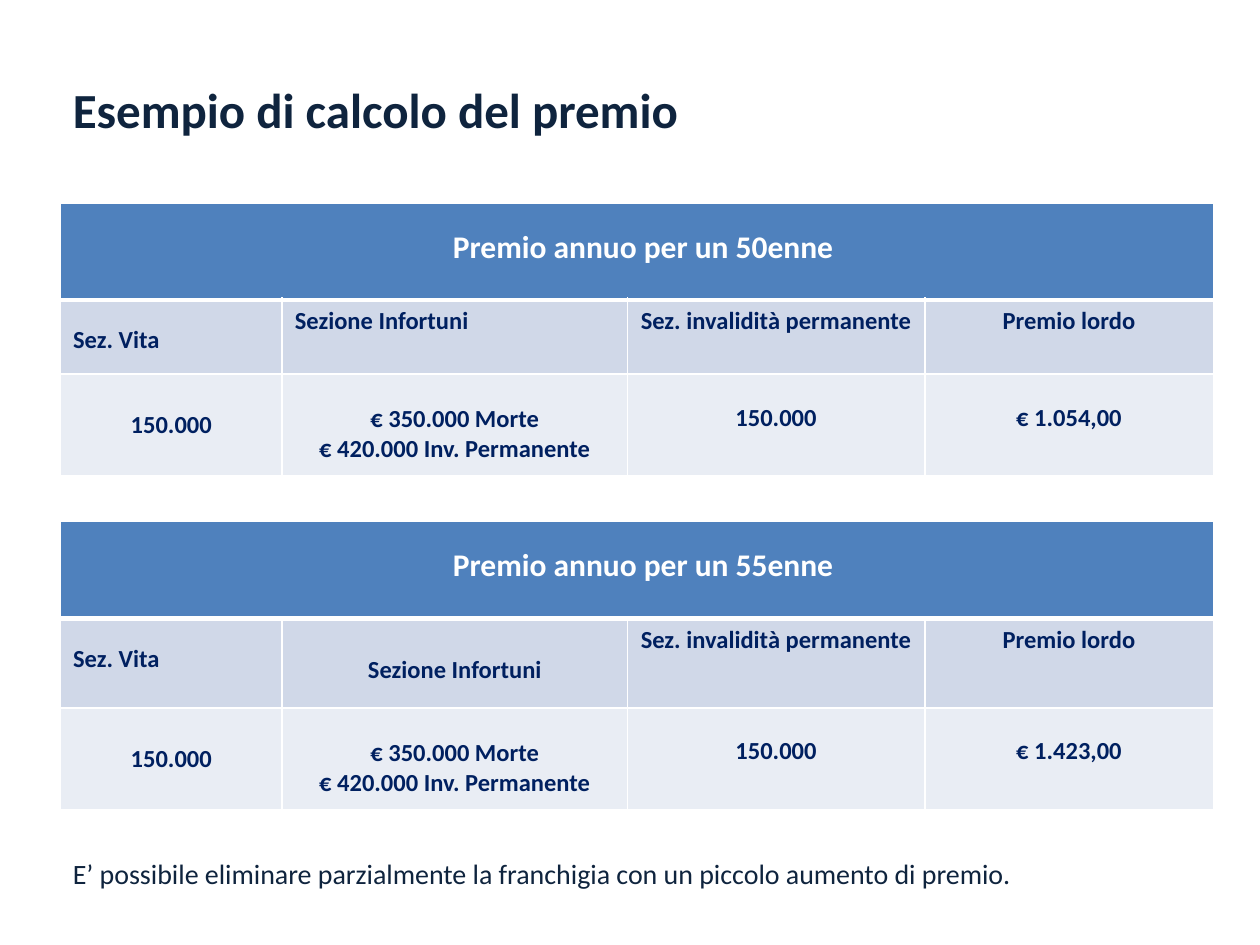
from lxml import etree
from pptx import Presentation, util as u
from pptx.dml.color import RGBColor
from pptx.enum.text import MSO_ANCHOR, PP_ALIGN
from pptx.oxml.ns import qn

TITLE = "Esempio di calcolo del premio"
NOTE = "E’ possibile eliminare parzialmente la franchigia con un piccolo aumento di premio."
HEADS = ["Sez. Vita", "Sezione Infortuni", "Sez. invalidità permanente", "Premio lordo"]
COVER = ["150.000", "€ 350.000 Morte\n€ 420.000 Inv. Permanente", "150.000"]
LEFT, WIDTH = 0.48, 9.15
COLS = [1.76, 2.74, 2.36, 2.29]
FILLS = ["4F81BD", "D0D8E8", "E9EDF4"]
NAVY, DARK, WHITE = "002060", "0F243E", "FFFFFF"
L, C, J = PP_ALIGN.LEFT, PP_ALIGN.CENTER, PP_ALIGN.JUSTIFY
TOP, MID = MSO_ANCHOR.TOP, MSO_ANCHOR.MIDDLE

# age, price, table top, header row height, alignment and top inset of "Sezione Infortuni"
PLANS = [
    ("50enne", "€ 1.054,00", 1.61, 0.59, L, 0.05),
    ("55enne", "€ 1.423,00", 4.14, 0.71, C, 0.29),
]


def color(code):
    return RGBColor.from_string(code)


def write(frame, words, size, code, bold, align):
    frame.text = words
    for par in frame.paragraphs:
        par.alignment = align
        for run in par.runs:
            font = run.font
            font.name, font.size, font.bold = "Calibri", u.Pt(size), bold
            font.color.rgb = color(code)


def label(slide, words, top, width, height, size, bold):
    box = slide.shapes.add_textbox(*map(u.Inches, (LEFT, top, width, height)))
    box.text_frame.word_wrap = True
    write(box.text_frame, words, size, DARK, bold, J)


def edge(cell, row):
    """White cell borders, thicker under the banner row."""
    props = cell._tc.get_or_add_tcPr()
    for side in "LRTB":
        thick = (row, side) in ((0, "B"), (1, "T"))
        line = etree.SubElement(props, qn("a:ln" + side), w=str(u.Pt(3 if thick else 1)))
        fill = etree.SubElement(line, qn("a:solidFill"))
        etree.SubElement(fill, qn("a:srgbClr"), val=WHITE)


def style(cell, words, row, align, anchor, top, bottom, right=0.1):
    edge(cell, row)
    cell.fill.solid()
    cell.fill.fore_color.rgb = color(FILLS[row])
    cell.vertical_anchor = anchor
    cell.margin_left, cell.margin_right = u.Inches(0.1), u.Inches(right)
    cell.margin_top, cell.margin_bottom = u.Inches(top), u.Inches(bottom)
    size, code = (18, WHITE) if row == 0 else (14, NAVY)
    write(cell.text_frame, words, size, code, True, align)


def plan(slide, age, price, top, head, align, inset):
    rows = [0.77, head, 0.81]
    place = map(u.Inches, (LEFT, top, WIDTH, sum(rows)))
    grid = slide.shapes.add_table(len(rows), len(COLS), *place).table
    for col, wide in zip(grid.columns, COLS):
        col.width = u.Inches(wide)
    for row, high in zip(grid.rows, rows):
        row.height = u.Inches(high)

    grid.cell(0, 0).merge(grid.cell(0, len(COLS) - 1))
    banner = [f"Premio annuo per un {age}", "", "", ""]
    looks = [(L, 0.2, 0), (align, inset, 0.05), (C, 0.05, 0.05), (C, 0.05, 0.05)]
    pads = [(0.05, 0.05), (0.14, 0), (0, 0.12), (0, 0.12)]
    for i, words in enumerate(banner):
        style(grid.cell(0, i), words, 0, C, TOP, 0.2, 0, right=0)
    for i, (words, (side, above, below)) in enumerate(zip(HEADS, looks)):
        style(grid.cell(1, i), words, 1, side, TOP, above, below)
    for i, (words, pad) in enumerate(zip(COVER + [price], pads)):
        style(grid.cell(2, i), words, 2, C, MID, *pad)


def main():
    deck = Presentation()
    deck.slide_width, deck.slide_height = u.Inches(10), u.Inches(7.5)
    slide = deck.slides.add_slide(deck.slide_layouts[6])
    label(slide, TITLE, 0.58, 5.82, 0.57, 28, True)
    for item in PLANS:
        plan(slide, *item)
    label(slide, NOTE, 6.75, WIDTH, 0.37, 16, False)
    deck.save("out.pptx")


if __name__ == "__main__":
    main()
